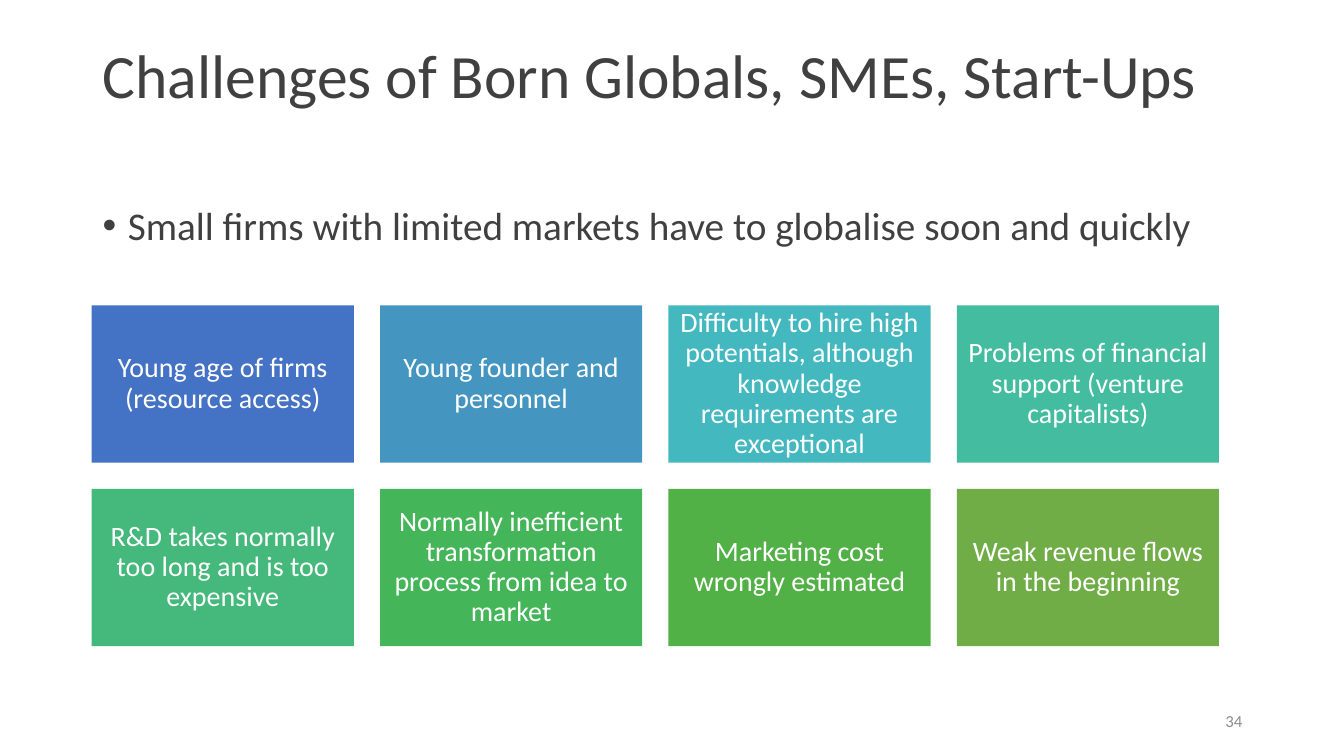
import pptx
from dataclasses import dataclass
from lxml import etree
from pptx.dml.color import RGBColor
from pptx.enum.shapes import MSO_SHAPE
from pptx.enum.text import MSO_ANCHOR, PP_ALIGN
from pptx.oxml.ns import qn
from pptx.util import Inches, Pt


@dataclass(frozen=True)
class Theme:
    font: str = "Calibri"
    text: str = "404041"
    tile_text: str = "FFFFFF"
    muted: str = "8C8C8C"
    title_size: int = 44
    body_size: int = 28
    tile_size: int = 20
    number_size: int = 12
    line_spacing: float = 0.9


THEME = Theme()

CHALLENGES = [
    ("Young age of firms (resource access)", "4472C4"),
    ("Young founder and personnel", "4496C1"),
    ("Difficulty to hire high potentials, although knowledge requirements are exceptional", "43B8BF"),
    ("Problems of financial support (venture capitalists)", "43BCA0"),
    ("R&D takes normally too long and is too expensive", "44B97B"),
    ("Normally inefficient transformation process from idea to market", "45B559"),
    ("Marketing cost wrongly estimated", "52B146"),
    ("Weak revenue flows in the beginning", "70AD47"),
]

# Tile grid, in inches
COLUMNS = 4
GRID_LEFT, GRID_TOP = 0.91, 3.03
TILE_WIDTH, TILE_HEIGHT = 2.6, 1.56
GAP = 0.26
TILE_INSET = 0.08


def write_text(shape, text, size, color, align=PP_ALIGN.LEFT,
               anchor=MSO_ANCHOR.TOP, line_spacing=THEME.line_spacing):
    frame = shape.text_frame
    frame.word_wrap = True
    frame.vertical_anchor = anchor
    paragraph = frame.paragraphs[0]
    paragraph.text = text
    paragraph.alignment = align
    paragraph.line_spacing = line_spacing
    paragraph.font.name = THEME.font
    paragraph.font.size = Pt(size)
    paragraph.font.color.rgb = RGBColor.from_string(color)


def add_text(slide, box, text, size, color, **layout):
    textbox = slide.shapes.add_textbox(*map(Inches, box))
    write_text(textbox, text, size, color, **layout)
    return textbox


def add_bullet(slide, box, text):
    textbox = slide.shapes.add_textbox(*map(Inches, box))
    properties = textbox.text_frame.paragraphs[0]._p.get_or_add_pPr()
    properties.set("marL", str(Inches(0.25)))
    properties.set("indent", str(Inches(-0.25)))
    etree.SubElement(properties, qn("a:buFont"), typeface="Arial")
    etree.SubElement(properties, qn("a:buChar"), char="•")
    write_text(textbox, text, THEME.body_size, THEME.text)


def add_tile(slide, index, text, color):
    row, column = divmod(index, COLUMNS)
    left = GRID_LEFT + column * (TILE_WIDTH + GAP)
    top = GRID_TOP + row * (TILE_HEIGHT + GAP)
    tile = slide.shapes.add_shape(
        MSO_SHAPE.RECTANGLE, Inches(left), Inches(top),
        Inches(TILE_WIDTH), Inches(TILE_HEIGHT))
    tile.shadow.inherit = False
    tile.fill.solid()
    tile.fill.fore_color.rgb = RGBColor.from_string(color)
    tile.line.fill.background()
    frame = tile.text_frame
    frame.margin_left = frame.margin_right = Inches(TILE_INSET)
    frame.margin_top = frame.margin_bottom = Inches(TILE_INSET)
    write_text(tile, text, THEME.tile_size, THEME.tile_text,
               align=PP_ALIGN.CENTER, anchor=MSO_ANCHOR.MIDDLE)


def main():
    presentation = pptx.Presentation()
    presentation.slide_width = Inches(13.33)
    presentation.slide_height = Inches(7.5)
    slide = presentation.slides.add_slide(presentation.slide_layouts[6])

    # Heading and key message
    add_text(slide, (0.92, 0.4, 11.5, 1.45),
             "Challenges of Born Globals, SMEs, Start-Ups",
             THEME.title_size, THEME.text)
    add_bullet(slide, (0.92, 2, 11.5, 0.8),
               "Small firms with limited markets have to globalise soon and quickly")

    # Challenge tiles
    for index, (text, color) in enumerate(CHALLENGES):
        add_tile(slide, index, text, color)

    # Slide number
    add_text(slide, (9.42, 6.95, 3, 0.4), "34", THEME.number_size, THEME.muted,
             align=PP_ALIGN.RIGHT, anchor=MSO_ANCHOR.MIDDLE, line_spacing=1.0)

    presentation.save("out.pptx")


if __name__ == "__main__":
    main()
